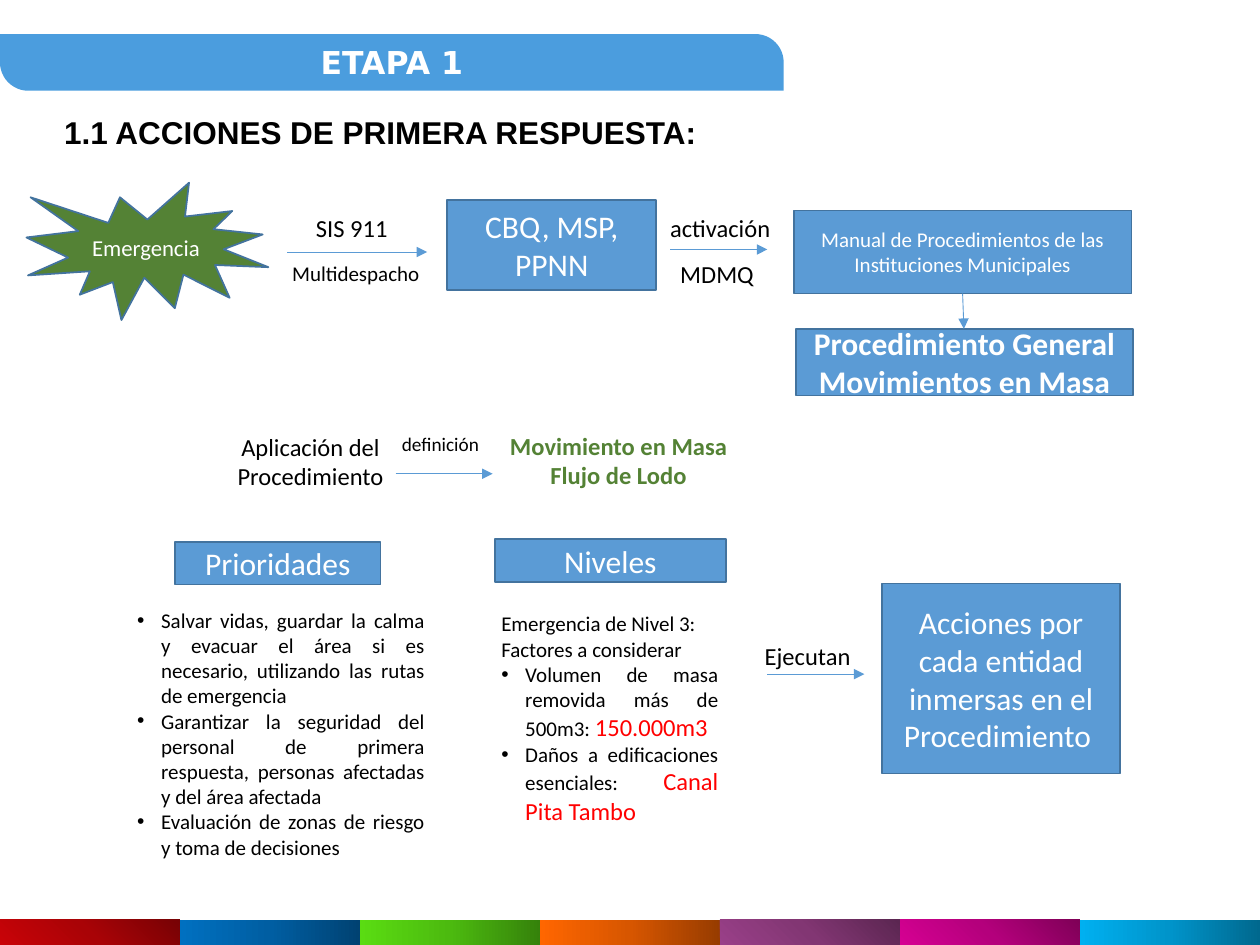
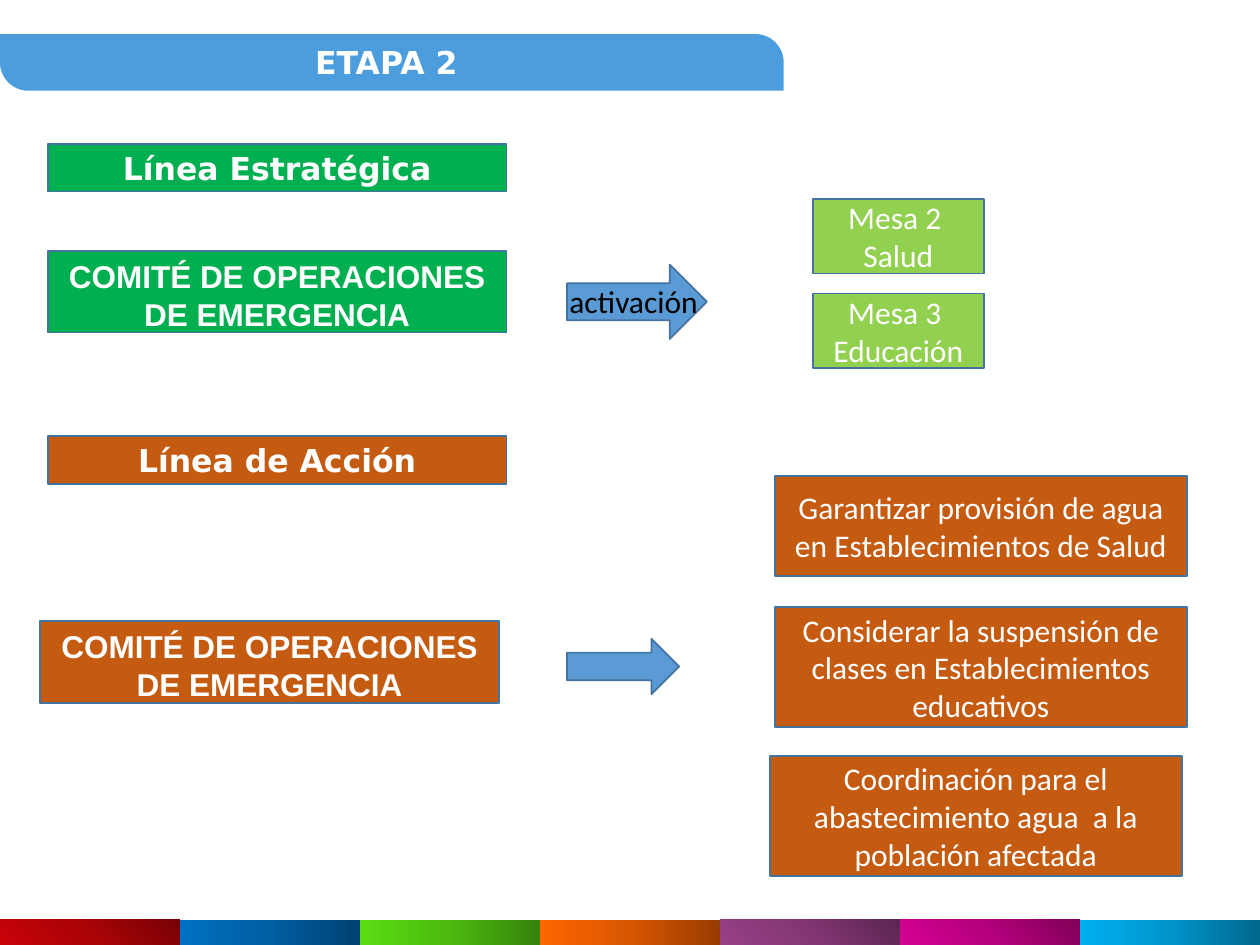
import pptx
import pptx.dml.color
import pptx.enum.shapes
import pptx.enum.text
import pptx.oxml
import pptx.oxml.ns
import pptx.util

SHAPE = pptx.enum.shapes.MSO_SHAPE
ALIGN = pptx.enum.text.PP_ALIGN
ANCHOR = pptx.enum.text.MSO_ANCHOR

THEME = {
    "color": {
        "white": "FFFFFF", "black": "000000", "red": "FF0000",
        "banner": "4B9DDE", "blue": "5B9BD5", "outline": "43739E",
        "moss": "548235", "green": "00B050", "lime": "92D050", "rust": "C55A11",
    },
    "size": {"big": 18, "medium": 14, "burst": 13, "small": 12, "tiny": 11},
    "font": {"body": "Calibri", "heading": "Arial", "banner": "DejaVu Sans"},
    "line": {"box": 1, "arrow": 0.5},
    "indent": 0.19,
}

# The page is a grid of 100 columns by 75 rows; every place is
# (left, top, width, height) in those units.
SLIDE_WIDTH, SLIDE_HEIGHT = pptx.util.Inches(10), pptx.util.Inches(7.5)
COLUMNS, ROWS = 100, 75

BANNER = (0, 2.7, 62.2, 4.5)
FOOTER_TOP, FOOTER_HEIGHT = 73, 2.1
# Dark, middle and bright colour of each tile, and whether it fades from a corner
FOOTER_TILES = [
    ("770205", "A90306", "C90308", True),
    ("004272", "005EA2", "0070C0", False),
    ("35820B", "4CBA0F", "5ADC12", False),
    ("973C00", "D75600", "FF6600", False),
    ("5B2651", "823673", "9A4089", True),
    ("7F0057", "B4007C", "D60093", True),
    ("00688E", "0094CA", "00B0F0", False),
]

# ---- Etapa 1 ----
RESPONSE_BOXES = [
    ("CBQ, MSP, PPNN", (35.5, 15.9, 16.6, 7.1), {}),
    ("Manual de Procedimientos de las Instituciones Municipales",
     (63, 16.7, 26.8, 6.6), {"size": "small"}),
    ("Procedimiento General Movimientos en Masa", (63.2, 26.1, 26.7, 5.3), {"bold": True}),
    ("Prioridades", (13.9, 43, 16.3, 3.4), {}),
    ("Niveles", (39.3, 42.8, 18.3, 3.4), {}),
    ("Acciones por cada entidad inmersas en el Procedimiento ",
     (70, 46.3, 18.9, 15.1), {}),
]
RESPONSE_LABELS = [
    ("1.1 ACCIONES DE PRIMERA RESPUESTA:", (4.1, 8.5, 88.8, 31.3),
     {"size": "big", "font": "heading", "bold": True}),
    ("SIS 911", (24.1, 16.4, 12.4, 3.4), {}),
    ("Multidespacho", (22.2, 20.2, 12.2, 3), {"size": "small", "wrap": False}),
    ("activación", (52.2, 16.4, 10.1, 3.4), {"wrap": False}),
    ("MDMQ", (53, 20.1, 7.9, 3.4), {"wrap": False}),
    ("Aplicación del Procedimiento", (17.8, 33.8, 13.7, 5.7), {"align": ALIGN.CENTER}),
    ("definición", (30.9, 33.8, 8.2, 2.9), {"size": "tiny", "wrap": False}),
    ("Movimiento en Masa Flujo de Lodo", (38.8, 33.7, 20.6, 5.7),
     {"align": ALIGN.CENTER, "color": "moss", "bold": True}),
    ("Ejecutan", (59.7, 50.4, 8.9, 3.4), {"wrap": False}),
]
# Start and end of each arrow
RESPONSE_ARROWS = [
    (22.8, 20, 33.9, 20),
    (53.2, 19.8, 60.9, 19.8),
    (76.4, 23.3, 76.5, 26.1),
    (31.4, 37.6, 39.1, 37.6),
    (60.9, 53.5, 68.6, 53.5),
]
EMERGENCY = ("Emergencia", (2.1, 14.5, 19.2, 10.9))
# Each paragraph: bulleted or not, plain text, highlighted text
PRIORITIES = [
    (True, "Salvar vidas, guardar la calma y evacuar el área si es necesario, "
           "utilizando las rutas de emergencia", ""),
    (True, "Garantizar la seguridad del personal de primera respuesta, "
           "personas afectadas y del área afectada", ""),
    (True, "Evaluación de zonas de riesgo y toma de decisiones", ""),
]
LEVELS = [
    (False, "Emergencia de Nivel 3:", ""),
    (False, "Factores a considerar", ""),
    (True, "Volumen de masa removida más de 500m3: ", "150.000m3"),
    (True, "Daños a edificaciones esenciales: ", "Canal Pita Tambo"),
]
RESPONSE_LISTS = [
    (PRIORITIES, (9.9, 47.7, 24.8, 21.2)),
    (LEVELS, (38.8, 48, 19.2, 18.2)),
]

# ---- Etapa 2 ----
COMMITTEE = "COMITÉ DE OPERACIONES DE EMERGENCIA"
LINE_SIZE, COMMITTEE_SIZE = (36.4, 3.8), (36.4, 6.5)
# Name, fill, place of the heading, place of the committee
LINES = [
    ("Línea Estratégica", "green", (3.8, 11.4), (3.8, 19.9)),
    ("Línea de Acción", "rust", (3.8, 34.6), (3.2, 49.3)),
]
BLOCK_ARROWS = [(45, 21, 11.1, 5.9), (45, 50.7, 8.9, 4.4)]
ACTIVATION = ("activación", (44.2, 21.9, 12.8, 4))
TABLES = ["Mesa 2  Salud", "Mesa 3  Educación"]
TABLE_FIRST, TABLE_STEP = (64.5, 15.8, 13.6, 5.9), 7.5
TASKS = [
    ("Garantizar provisión de agua en Establecimientos de Salud", (61.5, 37.8, 32.7, 7.9)),
    ("Considerar la suspensión de clases en Establecimientos educativos",
     (61.5, 48.2, 32.7, 9.5)),
    ("Coordinación para el abastecimiento agua  a la población afectada",
     (61.1, 60, 32.7, 9.5)),
]


def rgb(name):
    return pptx.dml.color.RGBColor.from_string(THEME["color"][name])


def on_grid(place):
    """Turn alternating columns and rows into slide lengths."""
    units = (SLIDE_WIDTH / COLUMNS, SLIDE_HEIGHT / ROWS)
    return [pptx.util.Emu(round(value * units[index % 2]))
            for index, value in enumerate(place)]


def add_span(para, text, size="big", font="body", color="white", bold=False):
    span = para.add_run()
    span.text = text
    span.font.size = pptx.util.Pt(THEME["size"][size])
    span.font.name = THEME["font"][font]
    span.font.bold = bold
    span.font.color.rgb = rgb(color)


def write(frame, text, align=ALIGN.CENTER, anchor=ANCHOR.MIDDLE, wrap=True, **span_format):
    frame.word_wrap = wrap
    frame.vertical_anchor = anchor
    para = frame.paragraphs[0]
    para.alignment = align
    add_span(para, text, **span_format)


def add_box(page, place, text="", kind=SHAPE.RECTANGLE, fill="blue", outlined=True, **text_format):
    box = page.shapes.add_shape(kind, *on_grid(place))
    box.shadow.inherit = False
    box.fill.solid()
    box.fill.fore_color.rgb = rgb(fill)
    if outlined:
        box.line.color.rgb = rgb("outline")
        box.line.width = pptx.util.Pt(THEME["line"]["box"])
    else:
        box.line.fill.background()
    if text:
        write(box.text_frame, text, **text_format)
    return box


def add_label(page, text, place, **text_format):
    box = page.shapes.add_textbox(*on_grid(place))
    settings = {"align": ALIGN.LEFT, "anchor": ANCHOR.TOP, "size": "medium", "color": "black"}
    write(box.text_frame, text, **{**settings, **text_format})


def add_bullet(para):
    indent = pptx.util.Inches(THEME["indent"])
    properties = para._p.get_or_add_pPr()
    properties.set("marL", str(indent))
    properties.set("indent", str(-indent))
    for tag, name, value in (("a:buFont", "typeface", "Arial"), ("a:buChar", "char", "•")):
        mark = pptx.oxml.ns.qn(tag)
        properties.append(properties.makeelement(mark, {name: value}))


def add_list(page, items, place):
    frame = page.shapes.add_textbox(*on_grid(place)).text_frame
    frame.word_wrap = True
    for index, (bulleted, plain, highlighted) in enumerate(items):
        para = frame.add_paragraph() if index else frame.paragraphs[0]
        para.alignment = ALIGN.JUSTIFY
        if bulleted:
            add_bullet(para)
        add_span(para, plain, size="small", color="black")
        if highlighted:
            add_span(para, highlighted, size="medium", color="red")


def add_arrow(page, ends):
    arrow = page.shapes.add_connector(pptx.enum.shapes.MSO_CONNECTOR.STRAIGHT, *on_grid(ends))
    arrow.line.color.rgb = rgb("blue")
    arrow.line.width = pptx.util.Pt(THEME["line"]["arrow"])
    line = arrow.line._get_or_add_ln()
    line.append(line.makeelement(pptx.oxml.ns.qn("a:tailEnd"), {"type": "triangle"}))
    properties = arrow._element.spPr
    properties.append(properties.makeelement(pptx.oxml.ns.qn("a:effectLst"), {}))


def fade(box, colors, from_corner):
    """Fill a box with a gradient that is dark on its right side."""
    stops = "".join(f'<a:gs pos="{index * 50000}"><a:srgbClr val="{color}"/></a:gs>'
                    for index, color in enumerate(colors))
    if from_corner:
        course = '<a:path path="circle"><a:fillToRect l="100000" b="100000"/></a:path>'
    else:
        course = '<a:lin ang="10800000" scaled="1"/>'
    gradient = pptx.oxml.parse_xml(
        f'<a:gradFill {pptx.oxml.ns.nsdecls("a")} rotWithShape="1">'
        f"<a:gsLst>{stops}</a:gsLst>{course}</a:gradFill>")
    properties = box._element.spPr
    properties.replace(properties.find(pptx.oxml.ns.qn("a:solidFill")), gradient)


def add_page(deck, title):
    """Add a blank page with the banner and the coloured footer."""
    page = deck.slides.add_slide(deck.slide_layouts[6])
    tile_width = COLUMNS / len(FOOTER_TILES)
    for index, (*colors, from_corner) in enumerate(FOOTER_TILES):
        place = (index * tile_width, FOOTER_TOP, tile_width, FOOTER_HEIGHT)
        fade(add_box(page, place, outlined=False), colors, from_corner)
    banner = add_box(page, BANNER, title, kind=SHAPE.ROUND_2_DIAG_RECTANGLE, fill="banner",
                     outlined=False, font="banner", bold=True)
    banner.adjustments[0], banner.adjustments[1] = 0, 0.5
    return page


def build_first_response(deck):
    page = add_page(deck, "ETAPA 1")
    text, place = EMERGENCY
    add_box(page, place, text, kind=SHAPE.EXPLOSION1, fill="moss", size="burst")
    for text, place, text_format in RESPONSE_BOXES:
        add_box(page, place, text, **text_format)
    for text, place, text_format in RESPONSE_LABELS:
        add_label(page, text, place, **text_format)
    for items, place in RESPONSE_LISTS:
        add_list(page, items, place)
    for ends in RESPONSE_ARROWS:
        add_arrow(page, ends)


def build_committees(deck):
    page = add_page(deck, "ETAPA 2 ")
    for name, fill, heading_corner, committee_corner in LINES:
        add_box(page, heading_corner + LINE_SIZE, name, fill=fill, font="banner", bold=True)
        add_box(page, committee_corner + COMMITTEE_SIZE, COMMITTEE, fill=fill,
                font="heading", bold=True, anchor=ANCHOR.TOP)
    for place in BLOCK_ARROWS:
        add_box(page, place, kind=SHAPE.RIGHT_ARROW)
    add_label(page, *ACTIVATION, size="big")
    left, top, width, height = TABLE_FIRST
    for index, text in enumerate(TABLES):
        add_box(page, (left, top + index * TABLE_STEP, width, height), text, fill="lime")
    for text, place in TASKS:
        add_box(page, place, text, fill="rust")


def main():
    deck = pptx.Presentation()
    deck.slide_width, deck.slide_height = SLIDE_WIDTH, SLIDE_HEIGHT
    build_first_response(deck)
    build_committees(deck)
    deck.save("out.pptx")


if __name__ == "__main__":
    main()
